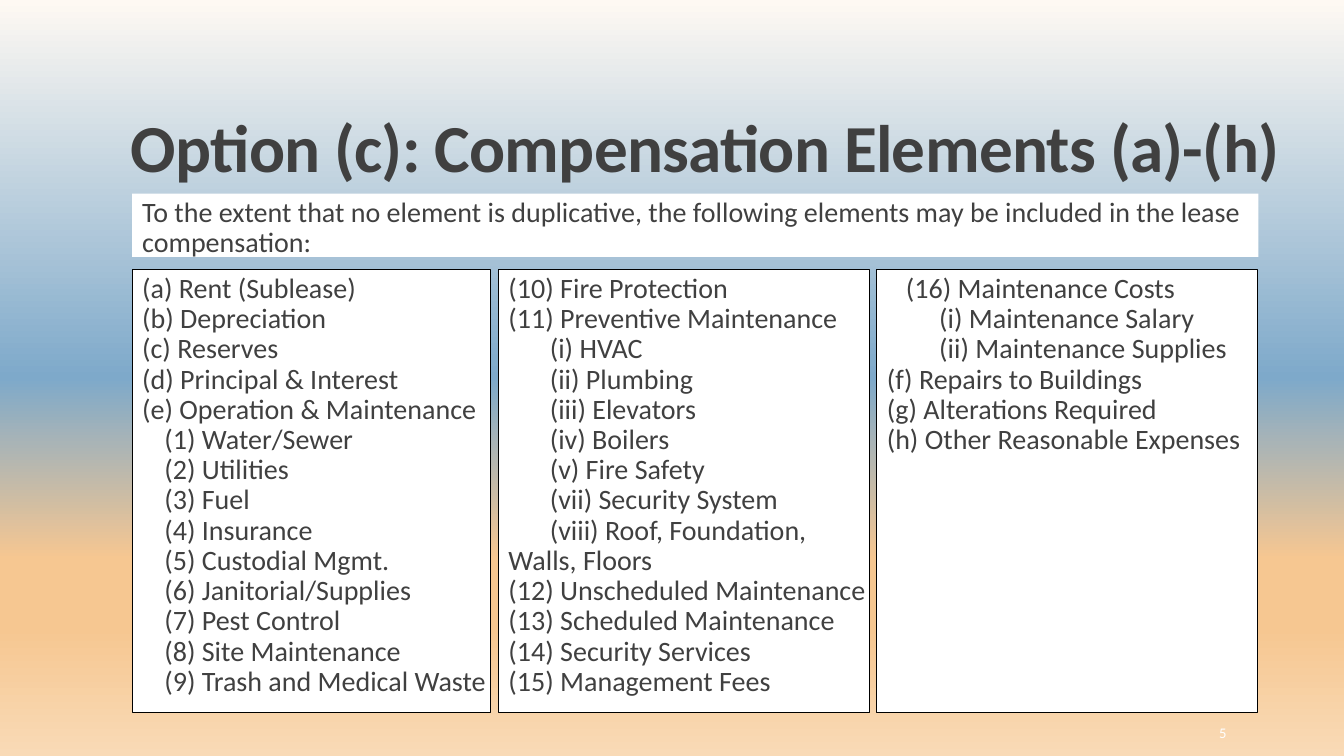
from pptx import Presentation, util as u
from pptx.dml.color import RGBColor
from pptx.enum import shapes, text
from pptx.oxml import parse_xml
from pptx.oxml.ns import nsdecls


def rgb(value):
    return RGBColor.from_string(value)


class Page:
    """Style and current slide; positions are percentages of the slide."""
    font, ink, paper, border = "Calibri", "404040", "FFFFFF", "000000"

    def __init__(self, deck):
        self.width, self.height = deck.slide_width, deck.slide_height
        self.slide = deck.slides.add_slide(deck.slide_layouts[6])

    def place(self, left, top, width, height):
        return (int(left * self.width / 100), int(top * self.height / 100),
                int(width * self.width / 100), int(height * self.height / 100))

    def background(self, stops):
        fill = self.slide.background.fill
        fill.gradient()
        fill.gradient_angle = 270
        stop_list = fill.gradient_stops._gsLst
        for stop in list(stop_list):
            stop_list.remove(stop)
        for position, color in stops:
            stop_list.append(parse_xml(
                f'<a:gs {nsdecls("a")} pos="{position * 1000}">'
                f'<a:srgbClr val="{color}"/></a:gs>'))

    def set_words(self, paragraph, words, size, color=None, bold=False, spacing=0.9):
        paragraph.text = words
        paragraph.line_spacing = spacing
        paragraph.font.name = self.font
        paragraph.font.size = u.Pt(size)
        paragraph.font.bold = bold
        paragraph.font.color.rgb = rgb(color or self.ink)

    def label(self, words, area, size, anchor, **style):
        box = self.slide.shapes.add_textbox(*self.place(*area))
        box.text_frame.word_wrap = True
        box.text_frame.vertical_anchor = anchor
        paragraph = box.text_frame.paragraphs[0]
        self.set_words(paragraph, words, size, **style)
        return paragraph

    def panel(self, lines, area, indents=(0.1,), outlined=True):
        """White box; each line is (level, words), indents are in inches."""
        box = self.slide.shapes.add_shape(
            shapes.MSO_SHAPE.RECTANGLE, *self.place(*area))
        box.shadow.inherit = False
        box.fill.solid()
        box.fill.fore_color.rgb = rgb(self.paper)
        if outlined:
            box.line.color.rgb = rgb(self.border)
            box.line.width = u.Pt(0.75)
        else:
            box.line.fill.background()
        frame = box.text_frame
        frame.word_wrap = True
        frame.vertical_anchor = text.MSO_ANCHOR.TOP
        frame.margin_left = frame.margin_right = 0
        for number, (level, words) in enumerate(lines):
            paragraph = frame.add_paragraph() if number else frame.paragraphs[0]
            # Wrapped lines return to the base indent
            properties = paragraph._p.get_or_add_pPr()
            properties.set("marL", str(u.Inches(indents[0])))
            properties.set("indent", str(u.Inches(indents[level] - indents[0])))
            paragraph.alignment = text.PP_ALIGN.LEFT
            self.set_words(paragraph, words, 20)


BACKDROP = [(0, "FEF9F3"), (50, "7EA9CA"), (74, "F6C791"),
            (83, "F6C791"), (100, "F9DAB6")]
INTRO = ("To the extent that no element is duplicative, the following elements "
         "may be included in the lease compensation:")

# Columns: width, indent per level, lines
ELEMENTS = [
    (26.7, (0.1, 0.32), [
        (0, "(a) Rent (Sublease)"), (0, "(b) Depreciation"), (0, "(c) Reserves"),
        (0, "(d) Principal & Interest"), (0, "(e) Operation & Maintenance"),
        (1, "(1) Water/Sewer"), (1, "(2) Utilities"), (1, "(3) Fuel"),
        (1, "(4) Insurance"), (1, "(5) Custodial Mgmt."),
        (1, "(6) Janitorial/Supplies"), (1, "(7) Pest Control"),
        (1, "(8) Site Maintenance"), (1, "(9) Trash and Medical Waste")]),
    (27.6, (0.1, 0.51), [
        (0, "(10) Fire Protection"), (0, "(11) Preventive Maintenance"),
        (1, "(i) HVAC"), (1, "(ii) Plumbing"), (1, "(iii) Elevators"),
        (1, "(iv) Boilers"), (1, "(v) Fire Safety"), (1, "(vii) Security System"),
        (1, "(viii) Roof, Foundation,\vWalls, Floors"),
        (0, "(12) Unscheduled Maintenance"), (0, "(13) Scheduled Maintenance"),
        (0, "(14) Security Services"), (0, "(15) Management Fees")]),
    (28.35, (0.1, 0.29, 0.62), [
        (1, "(16) Maintenance Costs"), (2, "(i) Maintenance Salary"),
        (2, "(ii) Maintenance Supplies"), (0, "(f) Repairs to Buildings"),
        (0, "(g) Alterations Required"), (0, "(h) Other Reasonable Expenses")]),
]
LEFT, GAP = 9.83, 0.55


def main():
    deck = Presentation()
    deck.slide_width, deck.slide_height = u.Inches(13.33), u.Inches(7.5)
    page = Page(deck)
    page.background(BACKDROP)

    # Title, slightly condensed
    title = page.label("Option (c): Compensation Elements (a)-(h)",
                       (9, 4.13, 89.65, 21.2), 48, text.MSO_ANCHOR.BOTTOM,
                       bold=True, spacing=0.85)
    title.runs[0].font._element.set("spc", "-50")

    # Introduction
    page.panel([(0, INTRO)], (LEFT, 25.6, 83.8, 8.4), outlined=False)

    # Compensation elements
    left = LEFT
    for width, indents, lines in ELEMENTS:
        page.panel(lines, (left, 35.6, width, 58.67), indents)
        left += width + GAP

    # Page number
    number = page.label("5", (82, 95, 10, 4), 10.5, text.MSO_ANCHOR.MIDDLE,
                        color="FFFFFF")
    number.alignment = text.PP_ALIGN.RIGHT

    deck.save("out.pptx")


if __name__ == "__main__":
    main()
